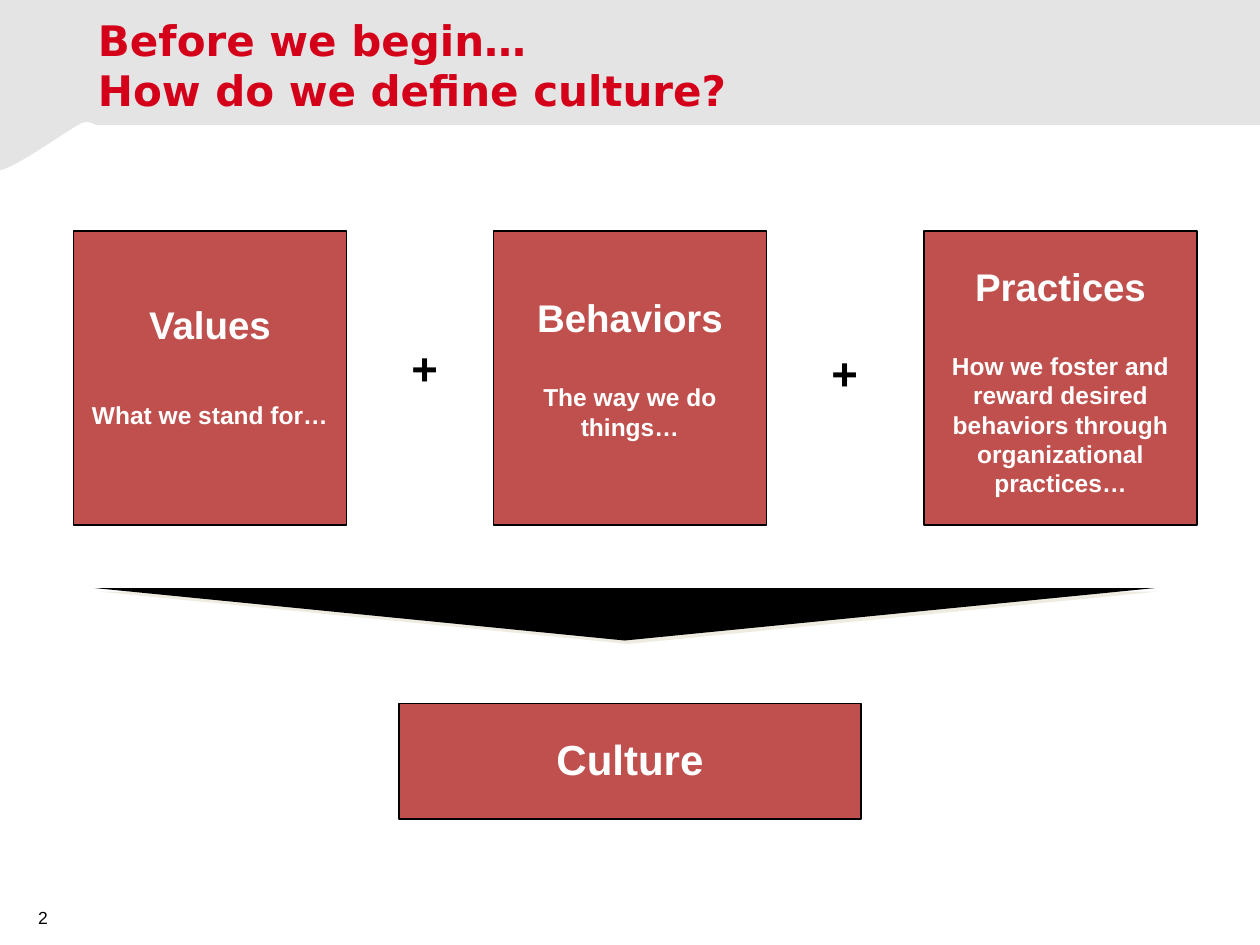
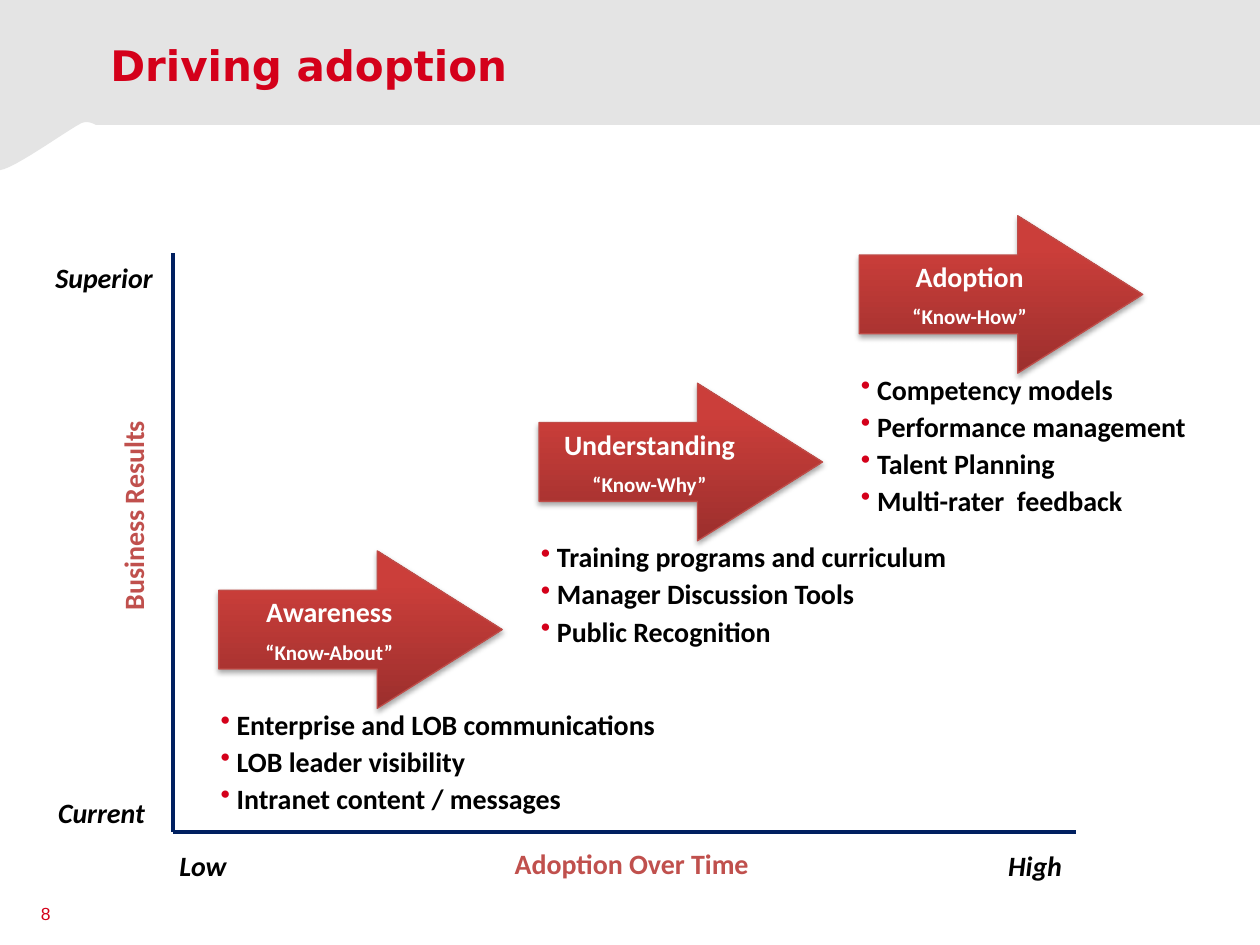
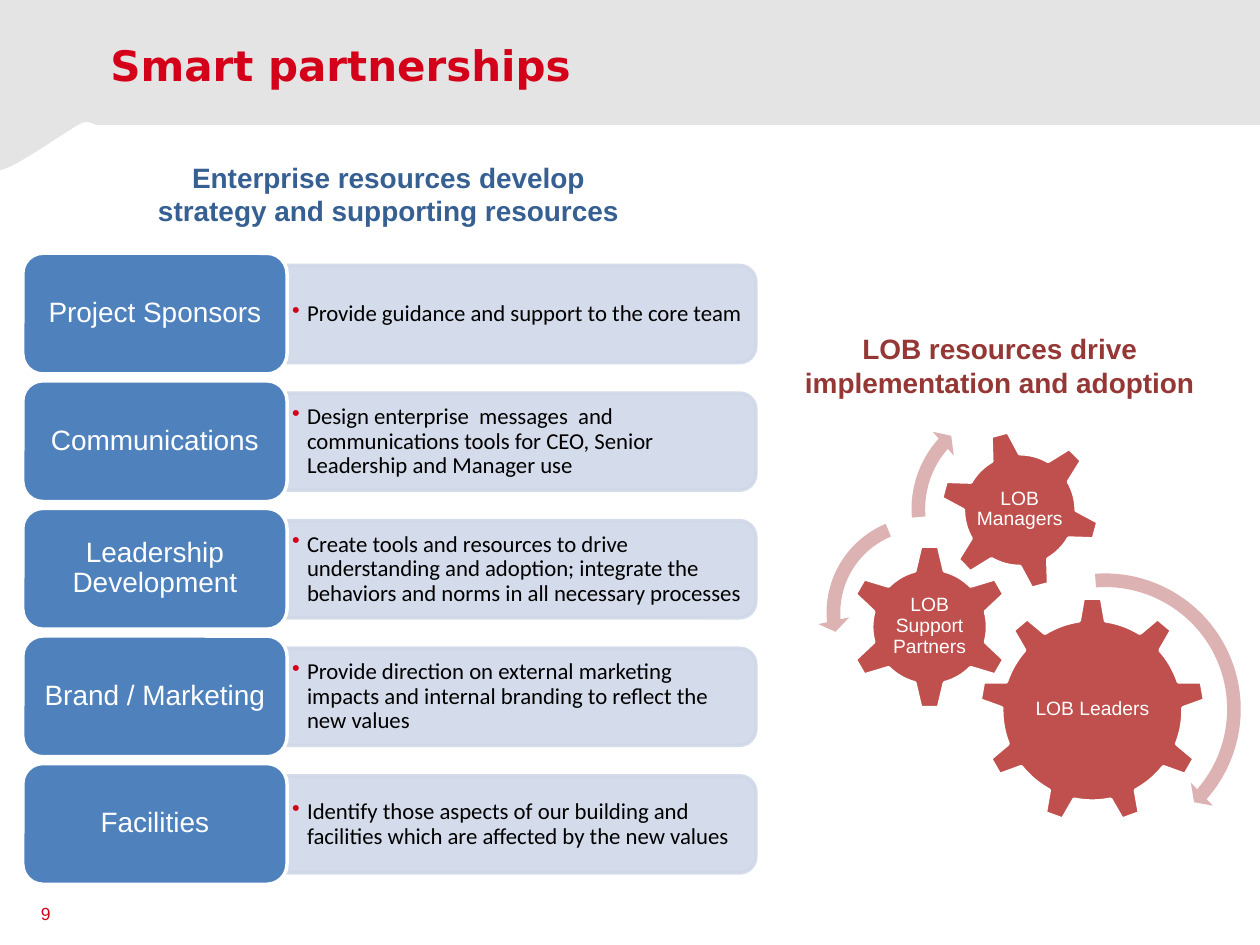
from collections import namedtuple

from lxml.etree import SubElement
from pptx import Presentation
from pptx.dml.color import RGBColor
from pptx.enum.shapes import MSO_CONNECTOR, MSO_SHAPE as SHAPE
from pptx.enum.text import MSO_ANCHOR as ANCHOR, PP_ALIGN as ALIGN
from pptx.oxml.ns import qn
from pptx.util import Pt

Box = namedtuple("Box", "x y w h")

RED, BRICK, WHITE, BLACK = "D4001A", "C0504D", "FFFFFF", "000000"
BAND, NAVY, BLUE, PALE_BLUE, PALE_RED = "E4E4E4", "002060", "4F81BD", "D0D8E8", "DCB3B2"
TITLE_BOX = Box(56, 3, 628, 68)
CENTER, MIDDLE = ALIGN.CENTER, ANCHOR.MIDDLE


# Shared helpers
def rgb(value):
    return RGBColor.from_string(value)


def points(box):
    return [Pt(length) for length in box]


def centered(x, y, w, h):
    return Box(x - w / 2, y - h / 2, w, h)


def add_bullet(para, indent):
    props = para._p.get_or_add_pPr()
    props.set("marL", str(Pt(indent)))
    props.set("indent", str(-Pt(indent)))
    SubElement(SubElement(props, qn("a:buClr")), qn("a:srgbClr"), val=RED)
    SubElement(props, qn("a:buChar"), char="•")


def write(shape, lines, size=16, font="Arial", color=BLACK, bold=False, italic=False,
          align=ALIGN.LEFT, anchor=ANCHOR.TOP, inset=(0, 0), top=None,
          before=0, leading=None, bullet=None):
    """Fill a shape with lines; a line is a string or (string, size, space before)."""
    frame = shape.text_frame
    frame.word_wrap = True
    frame.vertical_anchor = anchor
    frame.margin_left = frame.margin_right = Pt(inset[0])
    frame.margin_top = Pt(inset[1] if top is None else top)
    frame.margin_bottom = Pt(inset[1])
    for number, line in enumerate(lines):
        content, line_size, gap = (line, size, before) if isinstance(line, str) else line
        para = frame.paragraphs[0] if number == 0 else frame.add_paragraph()
        para.alignment = align
        if leading:
            para.line_spacing = leading
        if number and gap:
            para.space_before = Pt(gap)
        if bullet:
            add_bullet(para, bullet)
        span = para.add_run()
        span.text = content
        span.font.name, span.font.size = font, Pt(line_size)
        span.font.bold, span.font.italic = bold, italic
        span.font.color.rgb = rgb(color)


def add_text(page, box, lines, rotation=0, **style):
    shape = page.shapes.add_textbox(*points(box))
    shape.rotation = rotation
    write(shape, lines, **style)


def add_shape(page, kind, box, fill, line=None, width=0.75, rotation=0, adjust=()):
    shape = page.shapes.add_shape(kind, *points(box))
    shape.shadow.inherit = False
    shape.rotation = rotation
    for index, percent in enumerate(adjust):
        shape.adjustments[index] = percent / 100
    shape.fill.solid()
    shape.fill.fore_color.rgb = rgb(fill)
    if line:
        shape.line.color.rgb = rgb(line)
        shape.line.width = Pt(width)
    else:
        shape.line.fill.background()
    return shape


def add_shadow(shape, color, alpha, blur, distance, angle):
    effects = shape._element.spPr.find(qn("a:effectLst"))
    shadow = SubElement(effects, qn("a:outerShdw"), blurRad=str(Pt(blur)),
                        dist=str(Pt(distance)), dir=str(angle * 60000), rotWithShape="0")
    tint = SubElement(shadow, qn("a:srgbClr"), val=color)
    SubElement(tint, qn("a:alpha"), val=str(alpha * 1000))


def set_alpha(shape, alpha):
    for tint in list(shape._element.spPr.iter(qn("a:srgbClr"))):
        SubElement(tint, qn("a:alpha"), val=str(alpha * 1000))


def add_line(page, start, end, color, width):
    line = page.shapes.add_connector(MSO_CONNECTOR.STRAIGHT, *points(start + end))
    line.line.color.rgb = rgb(color)
    line.line.width = Pt(width)
    SubElement(line._element.spPr, qn("a:effectLst"))


def curve(a, b, c, d, steps=12):
    """Points along a cubic curve, without its start."""
    for step in range(1, steps + 1):
        t = step / steps
        u = 1 - t
        yield tuple(u ** 3 * p + 3 * u * u * t * q + 3 * u * t * t * r + t ** 3 * s
                    for p, q, r, s in zip(a, b, c, d))


def add_page(deck, title, title_inset=(7.2, 3.6)):
    """Blank page with the grey band and the red title."""
    page = deck.slides.add_slide(deck.slide_layouts[6])
    shoulder, crest, tail = (54.7, 71.3), (46.1, 70.6), (0, 97.2)
    outline = [(720, 0), (720, 71.3), shoulder,
               *curve(shoulder, (51.8, 69.8), (49, 69.1), crest),
               *curve(crest, (36.7, 75.6), (7.9, 96.5), tail)]
    builder = page.shapes.build_freeform(0, 0)
    builder.add_line_segments([points(point) for point in outline], close=True)
    band = builder.convert_to_shape()
    band.shadow.inherit = False
    band.fill.solid()
    band.fill.fore_color.rgb = rgb(BAND)
    band.line.fill.background()
    add_text(page, TITLE_BOX, title, size=24, font="DejaVu Sans", color=RED,
             bold=True, anchor=MIDDLE, inset=title_inset)
    return page


def add_number(page, number):
    add_text(page, Box(0, 504, 36, 36), [number], size=10, color=RED,
             align=ALIGN.RIGHT, anchor=MIDDLE, inset=(7.2, 3.6))


# Slide: definition of culture
def add_culture_sum(page, box):
    # Offset, heading, body, top inset, gap under the heading
    parts = [
        (0, "Values", "What we stand for…", 40, 30),
        (240, "Behaviors", "The way we do things…", 36, 24),
        (486, "Practices", "How we foster and reward desired behaviors through "
                           "organizational practices…", 18, 24),
    ]
    for offset, heading, body, top, gap in parts:
        card = add_shape(page, SHAPE.RECTANGLE, Box(box.x + offset, box.y, 156, box.h),
                         BRICK, BLACK)
        write(card, [heading, (body, 14, gap)], size=22, color=WHITE, bold=True,
              align=CENTER, inset=(7.2, 3.6), top=top)
    for x, y in [(200.75, 78), (440.75, 80.5)]:
        add_text(page, centered(box.x + x, box.y + y, 30, 32), ["+"], size=26,
                 bold=True, align=CENTER, anchor=MIDDLE)


def add_culture_result(page, box):
    wedge = add_shape(page, SHAPE.ISOSCELES_TRIANGLE, Box(box.x, box.y, box.w, 30),
                      BLACK, rotation=180)
    add_shadow(wedge, "EEECE1", 100, 0, 2.8, 45)
    result = add_shape(page, SHAPE.RECTANGLE, Box(box.x + 174, box.y + 66, 264, 66),
                       BRICK, BLACK)
    write(result, ["Culture"], size=24, color=WHITE, bold=True, align=CENTER,
          anchor=MIDDLE, leading=0.95)


def build_culture(deck):
    page = add_page(deck, ["Before we begin…", "How do we define culture?"], (0, 0))
    add_culture_sum(page, Box(42, 132, 642, 168))
    add_culture_result(page, Box(54, 336, 606, 132))
    add_text(page, Box(2, 498, 45, 36), ["2"], size=10, align=CENTER,
             anchor=ANCHOR.BOTTOM, inset=(7.2, 3.6))


# Slide: adoption steps
def add_axes(page, box):
    bottom = box.y + box.h
    add_line(page, (box.x, box.y), (box.x, bottom), NAVY, 2.25)
    add_line(page, (box.x, bottom), (box.x + box.w, bottom), NAVY, 2.25)
    style = dict(font="Calibri", bold=True, align=CENTER, anchor=MIDDLE)
    ends = [("Superior", -39.5, 13.5), ("Current", -41, box.h - 11),
            ("Low", 17, box.h + 19), ("High", 492.5, box.h + 19)]
    for label, x, y in ends:
        add_text(page, centered(box.x + x, box.y + y, 80, 26), [label], italic=True, **style)
    names = [("Adoption Over Time", 262, box.h + 18, 0), ("Business Results", -23, 150, 270)]
    for label, x, y, rotation in names:
        add_text(page, centered(box.x + x, box.y + y, 140, 26), [label],
                 rotation=rotation, color=BRICK, **style)


def add_step(page, box, name, motto, actions, list_width):
    arrow = add_shape(page, SHAPE.RIGHT_ARROW, box, BRICK, "BF4C48", adjust=(50, 79.4))
    arrow.fill.gradient()
    arrow.fill.gradient_angle = 90
    for stop, (position, color) in zip(arrow.fill.gradient_stops,
                                       [(0, "9C2F2D"), (0.8, "CB3E3A")]):
        stop.position, stop.color.rgb = position, rgb(color)
    add_shadow(arrow, BLACK, 35, 3.1, 1.8, 90)
    write(arrow, [name, (motto, 12, 6)], font="Calibri", color=WHITE, bold=True,
          align=CENTER, anchor=MIDDLE)
    add_text(page, Box(box.x + 1, box.y + 89.5, list_width, 64), actions,
             font="Calibri", bold=True, before=2, bullet=9.25)


def build_adoption(deck):
    page = add_page(deck, ["Driving adoption"])
    axes = Box(99, 144.75, 516, 330.5)
    add_axes(page, axes)
    steps = [
        ("Awareness", "“Know-About”",
         ["Enterprise and LOB communications", "LOB leader visibility",
          "Intranet content / messages"], 265),
        ("Understanding", "“Know-Why”",
         ["Training programs and curriculum", "Manager Discussion Tools",
          "Public Recognition"], 250),
        ("Adoption", "“Know-How”",
         ["Competency models", "Performance management", "Talent Planning",
          "Multi-rater  feedback"], 210),
    ]
    for index, step in enumerate(steps):
        add_step(page, Box(axes.x + 26 + 183 * index, axes.y + 170 - 95.75 * index, 162, 90),
                 *step)
    add_number(page, "8")


# Slide: partnerships
def add_resource(page, box, name, duty):
    panel = Box(box.x + 150.4, box.y + 7, 268.5, 55.5)
    upright = centered(panel.x + panel.w / 2, panel.y + panel.h / 2, panel.h, panel.w)
    back = add_shape(page, SHAPE.ROUND_2_SAME_RECTANGLE, upright, PALE_BLUE, PALE_BLUE,
                     width=2, rotation=90)
    set_alpha(back, 90)
    add_text(page, Box(panel.x, panel.y + 2.5, 266, 50.5), [duty], size=13, font="Calibri",
             anchor=MIDDLE, inset=(3.6, 2), leading=0.9, bullet=8.5)
    label = add_shape(page, SHAPE.ROUNDED_RECTANGLE, Box(box.x, box.y, 151, box.h),
                      BLUE, WHITE, width=2)
    write(label, [name], color=WHITE, align=CENTER, anchor=MIDDLE, inset=(4.5, 2),
          leading=0.9)


def add_gears(page, box):
    # Kind, center, size, rotation, label
    gears = [
        (SHAPE.GEAR_9, 157, 180, 129.5, 0, "LOB Leaders"),
        (SHAPE.GEAR_6, 64, 132.25, 94.5, 0, "LOB Support Partners"),
        (SHAPE.GEAR_6, 115.5, 65.5, 92, 345, "LOB Managers"),
    ]
    for kind, x, y, size, rotation, label in gears:
        x, y = box.x + x, box.y + y
        add_shape(page, kind, centered(x, y, size, size), BRICK, WHITE, 2, rotation)
        add_text(page, centered(x, y - 0.5, size * 0.6, size * 0.6), [label], size=11,
                 color=WHITE, align=CENTER, anchor=MIDDLE, inset=(1.5, 1.5), leading=0.9)
    # Kind, left, top, size, adjustments in percent
    turns = [
        (SHAPE.CIRCULAR_ARROW, 81.5, 96.5, 165.5, (4.7, 299, 2478.4, 15945.1, 5.5)),
        (SHAPE.LEFT_CIRCULAR_ARROW, 0, 64, 120.25, (6.5, 430, 10489.1, 14837.8, 7.5)),
        (SHAPE.CIRCULAR_ARROW, 48.5, 0, 129.5, (6, 394.1, 13313.8, 10508.2, 7)),
    ]
    for kind, x, y, size, adjust in turns:
        add_shape(page, kind, Box(box.x + x, box.y + y, size, size), PALE_RED, adjust=adjust)


def build_partnerships(deck):
    page = add_page(deck, ["Smart partnerships"])
    heading = dict(bold=True, align=CENTER, inset=(7.2, 3.6))
    add_text(page, Box(44.5, 88, 355, 46),
             ["Enterprise resources develop", "strategy and supporting resources"],
             color="376092", **heading)
    add_text(page, Box(433.5, 186, 275.5, 46),
             ["LOB resources drive implementation and adoption"], color="953735", **heading)
    resources = [
        ("Project Sponsors", "Provide guidance and support to the core team"),
        ("Communications", "Design enterprise  messages  and communications tools for CEO, "
                           "Senior Leadership and Manager use"),
        ("Leadership Development", "Create tools and resources to drive understanding and "
                                   "adoption; integrate the behaviors and norms in all "
                                   "necessary processes"),
        ("Brand / Marketing", "Provide direction on external marketing impacts and internal "
                              "branding to reflect the new values"),
        ("Facilities", "Identify those aspects of our building and facilities which are "
                       "affected by the new values"),
    ]
    for index, (name, duty) in enumerate(resources):
        add_resource(page, Box(13, 144.75 + 72.9 * index, 419, 69), name, duty)
    add_gears(page, Box(467.25, 226, 247, 262))
    add_number(page, "9")


def main():
    deck = Presentation()
    deck.slide_width, deck.slide_height = Pt(720), Pt(540)
    build_culture(deck)
    build_adoption(deck)
    build_partnerships(deck)
    deck.save("out.pptx")


if __name__ == "__main__":
    main()
